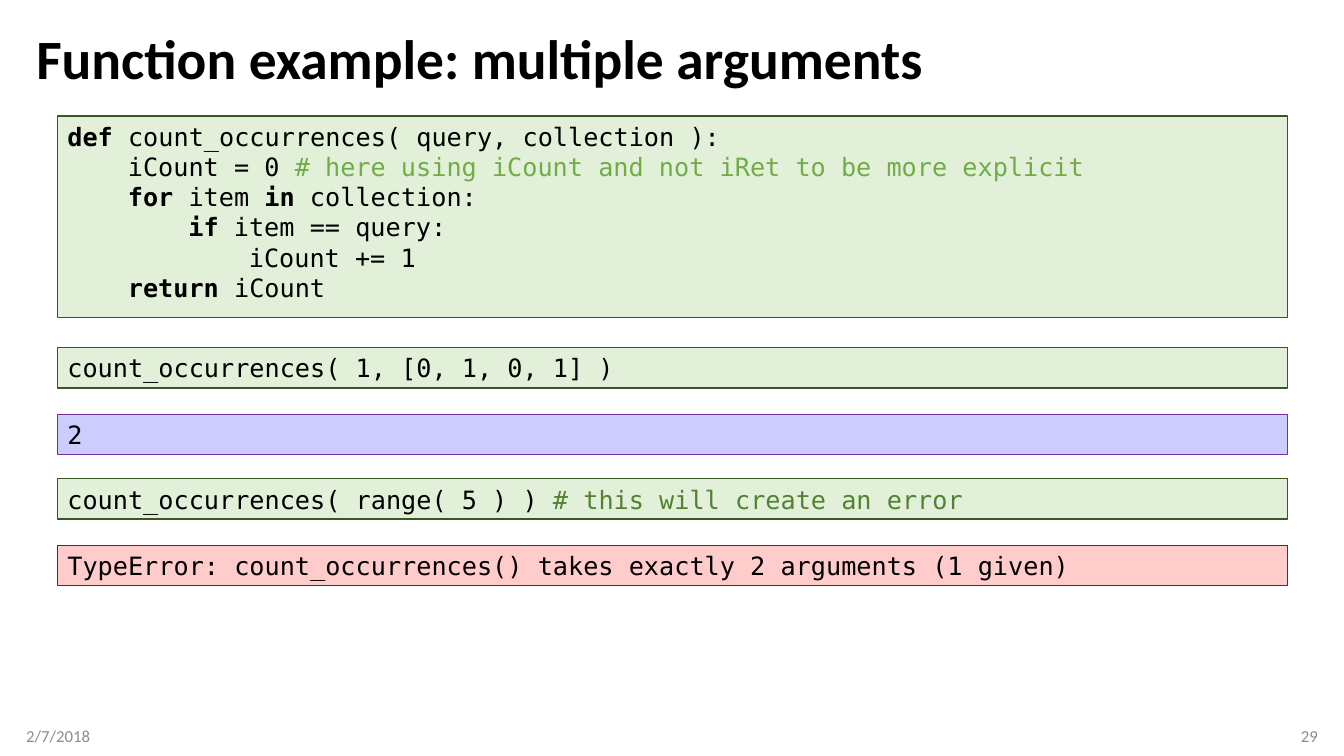
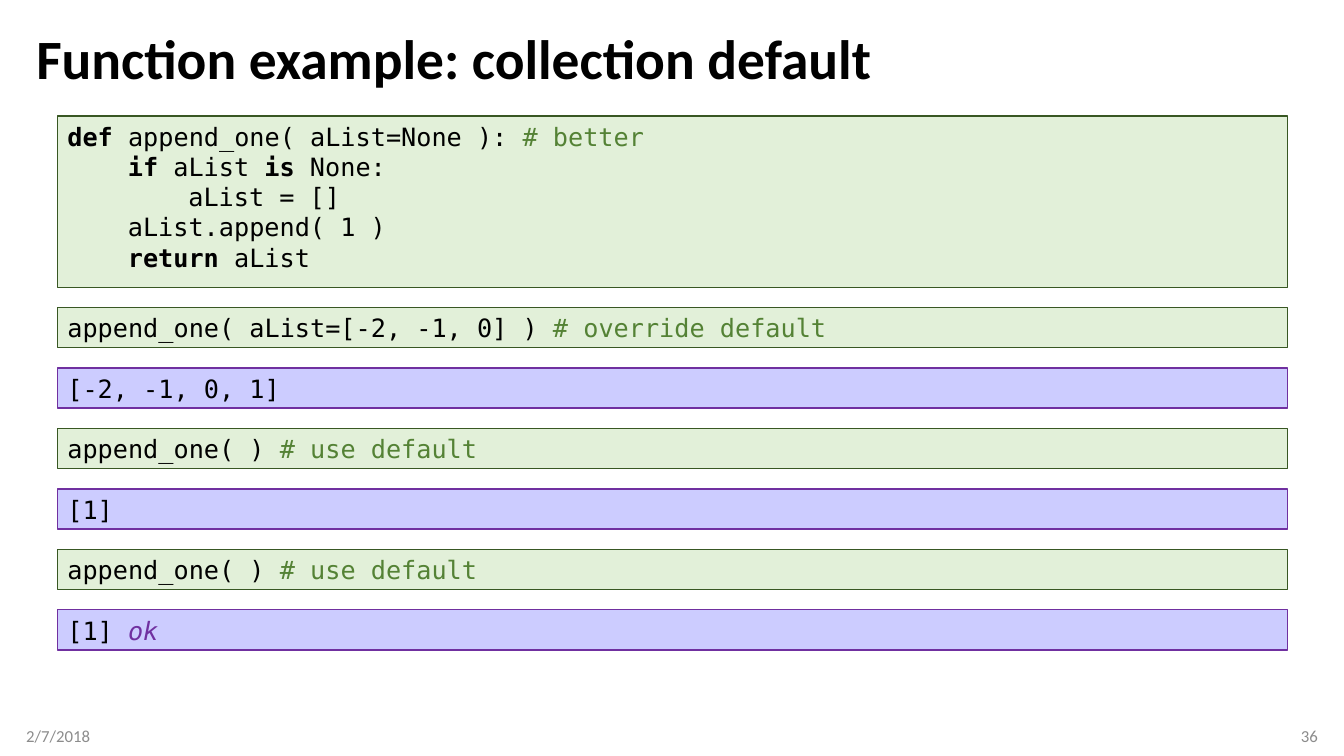
from dataclasses import dataclass

from pptx import Presentation
from pptx.dml.color import RGBColor
from pptx.enum import shapes, text
from pptx.util import Inches, Pt

BLACK = RGBColor(0x00, 0x00, 0x00)
GRAY = RGBColor(0x8C, 0x8C, 0x8C)
LIGHT_GREEN = RGBColor(0xE2, 0xF0, 0xD9)
GREEN = RGBColor(0x70, 0xAD, 0x47)
MID_GREEN = RGBColor(0x54, 0x82, 0x35)
DARK_GREEN = RGBColor(0x38, 0x57, 0x23)
LAVENDER = RGBColor(0xCC, 0xCC, 0xFF)
PURPLE = RGBColor(0x70, 0x30, 0xA0)
PINK = RGBColor(0xFF, 0xCC, 0xCC)
RED = RGBColor(0xC0, 0x00, 0x00)

# Panel kinds: fill and outline
CODE = (LIGHT_GREEN, DARK_GREEN)
OUTPUT = (LAVENDER, PURPLE)
ERROR = (PINK, RED)

TEXT_FONT = "Calibri"
CODE_FONT = "DejaVu Sans Mono"
MARGIN = 0.26
CONTENT_WIDTH = 12.81
FOOTER_WIDTH = 3
PANEL_LEFT, PANEL_WIDTH = 0.57, 12.2
LISTING_TOP = 1.15
LINE_HEIGHT = 0.3
ROW_HEIGHT = 0.4
INDENT = 0.6  # four characters of code


@dataclass
class Span:
    """A piece of a code line with its own look."""
    text: str
    color: RGBColor = BLACK
    bold: bool = False
    italic: bool = False


def keyword(word):
    return Span(word, bold=True)


def comment(words, color=MID_GREEN):
    return Span(words, color)


def set_font(font, name, size, color, bold=False):
    font.name = name
    font.size = Pt(size)
    font.color.rgb = color
    font.bold = bold


def add_title(slide, words):
    title = slide.shapes.title
    title.left, title.top = Inches(MARGIN), Inches(0.25)
    title.width, title.height = Inches(CONTENT_WIDTH), Inches(0.72)
    frame = title.text_frame
    frame.text = words
    frame.auto_size = text.MSO_AUTO_SIZE.NONE
    frame.vertical_anchor = text.MSO_ANCHOR.MIDDLE
    paragraph = frame.paragraphs[0]
    paragraph.alignment = text.PP_ALIGN.LEFT
    paragraph.line_spacing = 0.9
    set_font(paragraph.font, TEXT_FONT, 39.6, BLACK, bold=True)


def add_footer(slide, left, words, alignment):
    footer = slide.shapes.add_textbox(
        Inches(left), Inches(7.1), Inches(FOOTER_WIDTH), Inches(0.4))
    frame = footer.text_frame
    frame.word_wrap = True
    frame.vertical_anchor = text.MSO_ANCHOR.MIDDLE
    if alignment == text.PP_ALIGN.LEFT:
        frame.margin_left = 0
    else:
        frame.margin_right = 0
    paragraph = frame.paragraphs[0]
    paragraph.text = words
    paragraph.alignment = alignment
    set_font(paragraph.font, TEXT_FONT, 12, GRAY)


def fill_line(paragraph, level, spans):
    """Write one code line, indented by level."""
    paragraph.alignment = text.PP_ALIGN.LEFT
    set_font(paragraph.font, CODE_FONT, 18, BLACK)
    if level:
        paragraph._p.get_or_add_pPr().set("marL", str(Inches(level * INDENT)))
    for span in spans:
        if isinstance(span, str):
            span = Span(span)
        run = paragraph.add_run()
        run.text = span.text
        set_font(run.font, CODE_FONT, 18, span.color, span.bold)
        run.font.italic = span.italic


def add_panel(slide, top, height, colors, lines, anchor):
    """Draw a full-width box; each line is its level followed by its spans."""
    panel = slide.shapes.add_shape(
        shapes.MSO_SHAPE.RECTANGLE, Inches(PANEL_LEFT), Inches(top),
        Inches(PANEL_WIDTH), Inches(height))
    panel.shadow.inherit = False
    fill, outline = colors
    panel.fill.solid()
    panel.fill.fore_color.rgb = fill
    panel.line.color.rgb = outline
    panel.line.width = Pt(1)
    frame = panel.text_frame
    frame.word_wrap = True
    frame.vertical_anchor = anchor
    for index, (level, *spans) in enumerate(lines):
        paragraph = frame.add_paragraph() if index else frame.paragraphs[0]
        fill_line(paragraph, level, spans)


def add_listing(slide, lines):
    height = len(lines) * LINE_HEIGHT + 0.2
    add_panel(slide, LISTING_TOP, height, CODE, lines, text.MSO_ANCHOR.TOP)


def add_row(slide, top, colors, *spans):
    add_panel(slide, top, ROW_HEIGHT, colors, [(0, *spans)],
              text.MSO_ANCHOR.MIDDLE)


def add_slide(presentation, title, number):
    slide = presentation.slides.add_slide(presentation.slide_layouts[5])
    add_title(slide, title)
    add_footer(slide, MARGIN, "2/7/2018", text.PP_ALIGN.LEFT)
    add_footer(slide, MARGIN + CONTENT_WIDTH - FOOTER_WIDTH, number,
               text.PP_ALIGN.RIGHT)
    return slide


def build_multiple_arguments(presentation):
    slide = add_slide(presentation, "Function example: multiple arguments", "29")
    add_listing(slide, [
        (0, keyword("def "), "count_occurrences( query, collection ):"),
        (1, "iCount = 0 ",
         comment("# here using iCount and not iRet to be more explicit", GREEN)),
        (1, keyword("for"), " item ", keyword("in"), " collection:"),
        (2, keyword("if"), " item == query:"),
        (3, "iCount += 1"),
        (1, keyword("return"), " iCount"),
    ])
    add_row(slide, 3.45, CODE, "count_occurrences( 1, [0, 1, 0, 1] )")
    add_row(slide, 4.11, OUTPUT, "2")
    add_row(slide, 4.75, CODE, "count_occurrences( range( 5 ) ) ",
            comment("# this will create an error"))
    add_row(slide, 5.41, ERROR,
            "TypeError: count_occurrences() takes exactly 2 arguments (1 given)")


def build_collection_default(presentation):
    slide = add_slide(presentation, "Function example: collection default", "36")
    add_listing(slide, [
        (0, keyword("def "), "append_one( aList=None ): ", comment("# better")),
        (1, keyword("if "), "aList ", keyword("is"), " None:"),
        (2, "aList = []"),
        (1, "aList.append( 1 )"),
        (1, keyword("return "), "aList"),
    ])
    default_call = (CODE, "append_one( ) ", comment("# use default"))
    rows = [
        (CODE, "append_one( aList=[-2, -1, 0] ) ", comment("# override default")),
        (OUTPUT, "[-2, -1, 0, 1]"),
        default_call,
        (OUTPUT, "[1]"),
        default_call,
        (OUTPUT, "[1] ", Span("ok", PURPLE, italic=True)),
    ]
    for index, row in enumerate(rows):
        add_row(slide, 3.05 + index * 0.6, *row)


def main():
    presentation = Presentation()
    presentation.slide_width = Inches(13.33)
    presentation.slide_height = Inches(7.5)
    build_multiple_arguments(presentation)
    build_collection_default(presentation)
    presentation.save("out.pptx")


if __name__ == "__main__":
    main()
